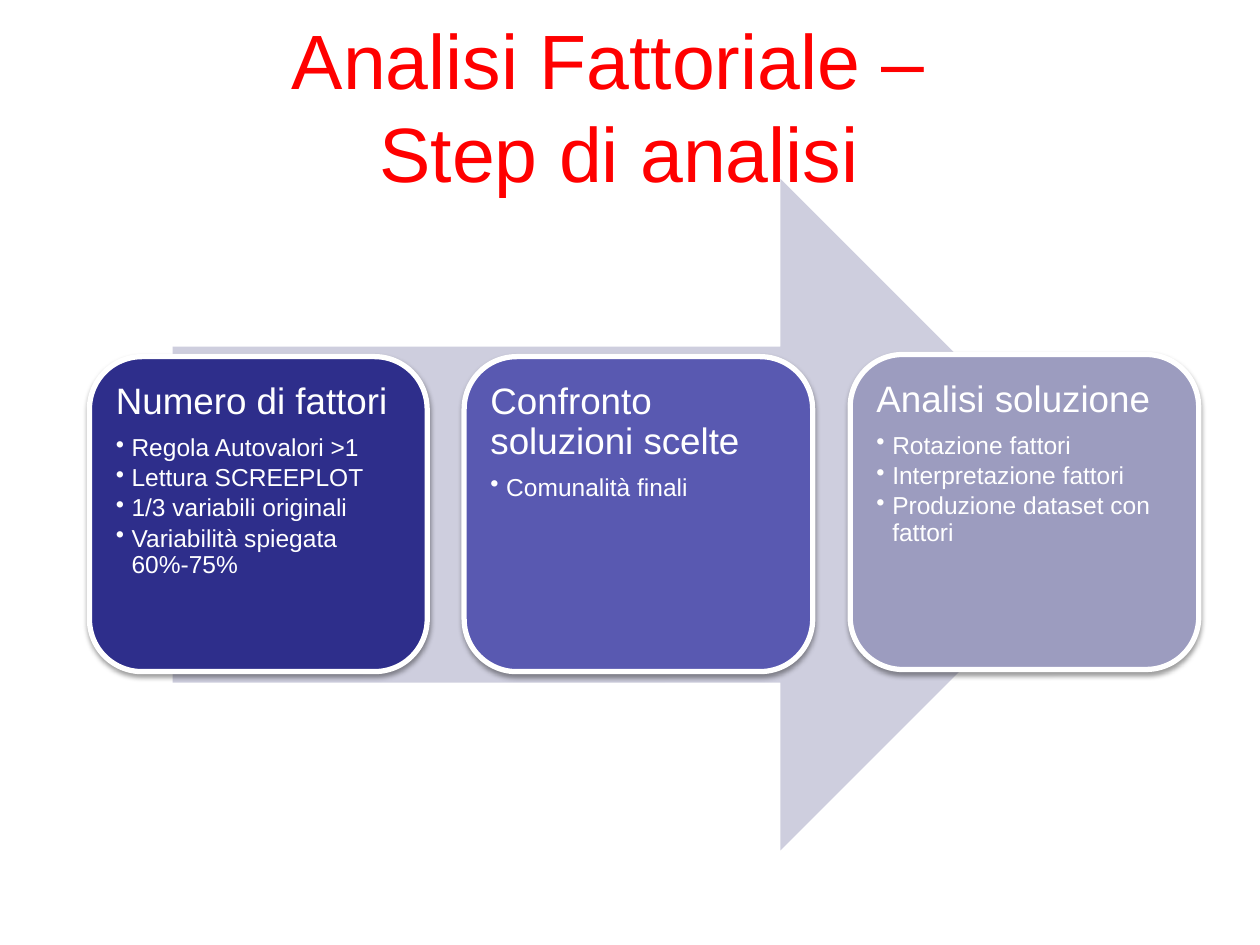
from dataclasses import dataclass

from lxml.etree import SubElement
from pptx import Presentation
from pptx.dml.color import RGBColor
from pptx.enum.shapes import MSO_SHAPE
from pptx.enum.text import MSO_ANCHOR, PP_ALIGN
from pptx.oxml.ns import qn
from pptx.util import Pt


@dataclass(frozen=True)
class Theme:
    font: str = "Arial"
    title: str = "FF0000"
    text: str = "FFFFFF"
    arrow: str = "CECEDE"
    cards: tuple = ("2E2E8B", "5959B1", "9C9CBF")
    title_size: int = 44
    head_size: int = 21
    item_size: int = 14


THEME = Theme()
TITLE = "Analisi Fattoriale – \nStep di analisi"
STEPS = [
    ((51.1, 203.8, 193, 180), "Numero di fattori",
     ["Regola Autovalori >1", "Lettura SCREEPLOT",
      "1/3 variabili originali", "Variabilità spiegata 60%-75%"]),
    ((265.2, 203.8, 199.2, 180), "Confronto soluzioni scelte",
     ["Comunalità finali"]),
    ((485.8, 202.6, 199.2, 180), "Analisi soluzione",
     ["Rotazione fattori", "Interpretazione fattori",
      "Produzione dataset con fattori"]),
]


def write(p, text, *, size, color, align=PP_ALIGN.LEFT, spacing=1.0, after=0,
          bullet=False):
    p.text = text
    p.alignment = align
    p.line_spacing = spacing
    p.space_after = Pt(after)
    for r in p.runs:
        r.font.name = THEME.font
        r.font.size = Pt(size)
        r.font.color.rgb = RGBColor.from_string(color)
    if bullet:
        p.level = 1
        pPr = p._p.get_or_add_pPr()
        pPr.set("marL", str(Pt(9)))
        pPr.set("indent", str(-Pt(9)))
        SubElement(pPr, qn("a:buChar"), char="•")


def add_block(s, kind, box, color):
    sp = s.shapes.add_shape(kind, *map(Pt, box))
    sp.shadow.inherit = False
    sp.fill.solid()
    sp.fill.fore_color.rgb = RGBColor.from_string(color)
    sp.line.fill.background()
    return sp


def add_shadow(sp):
    effects = sp._element.spPr.find(qn("a:effectLst"))
    shadow = SubElement(effects, qn("a:outerShdw"), blurRad=str(Pt(3.1)),
                        dist=str(Pt(1.6)), dir="5400000", rotWithShape="0")
    color = SubElement(shadow, qn("a:srgbClr"), val="000000")
    SubElement(color, qn("a:alpha"), val="38000")


def add_title(s, box):
    tf = s.shapes.add_textbox(*map(Pt, box)).text_frame
    tf.word_wrap = True
    tf.vertical_anchor = MSO_ANCHOR.MIDDLE
    write(tf.paragraphs[0], TITLE, size=THEME.title_size, color=THEME.title,
          align=PP_ALIGN.CENTER)


def add_card(s, box, color, head, items):
    sp = add_block(s, MSO_SHAPE.ROUNDED_RECTANGLE, box, color)
    sp.line.color.rgb = RGBColor.from_string(THEME.text)
    sp.line.width = Pt(3)
    add_shadow(sp)
    tf = sp.text_frame
    tf.word_wrap = True
    tf.vertical_anchor = MSO_ANCHOR.TOP
    tf.margin_left = tf.margin_right = Pt(6.3)
    tf.margin_top = tf.margin_bottom = Pt(6.3)
    write(tf.paragraphs[0], head, size=THEME.head_size, color=THEME.text,
          spacing=0.9, after=7.35)
    for item in items:
        write(tf.add_paragraph(), item, size=THEME.item_size,
              color=THEME.text, spacing=0.9, after=2.1, bullet=True)


def add_process(s, box):
    add_block(s, MSO_SHAPE.RIGHT_ARROW, box, THEME.arrow)
    for color, (card_box, head, items) in zip(THEME.cards, STEPS):
        add_card(s, card_box, color, head, items)


def main():
    prs = Presentation()
    prs.slide_width, prs.slide_height = Pt(720), Pt(540)
    s = prs.slides.add_slide(prs.slide_layouts[6])
    add_title(s, (30, 15, 648, 90))
    add_process(s, (98.6, 102.2, 539.3, 383.8))
    prs.save("out.pptx")


if __name__ == "__main__":
    main()
